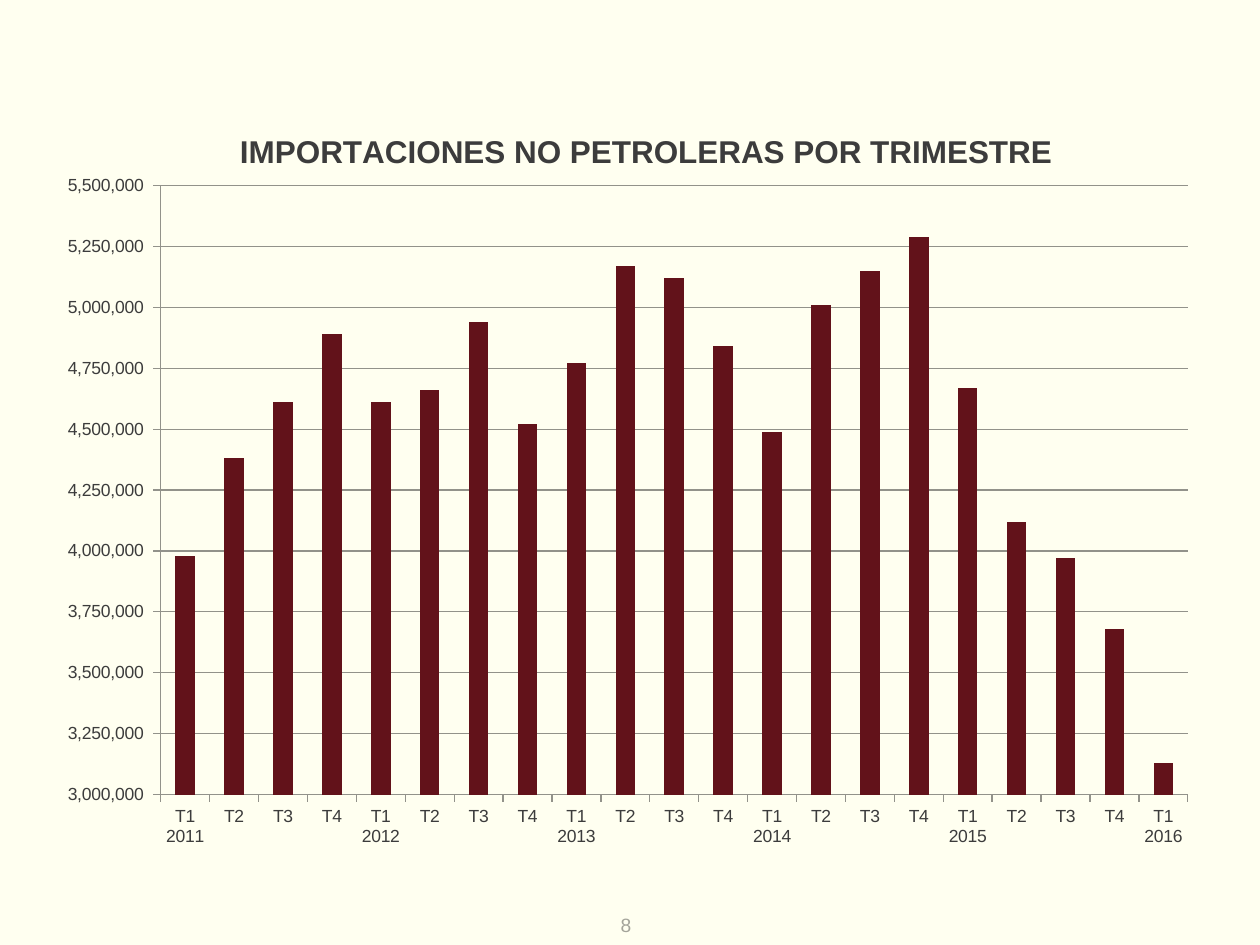
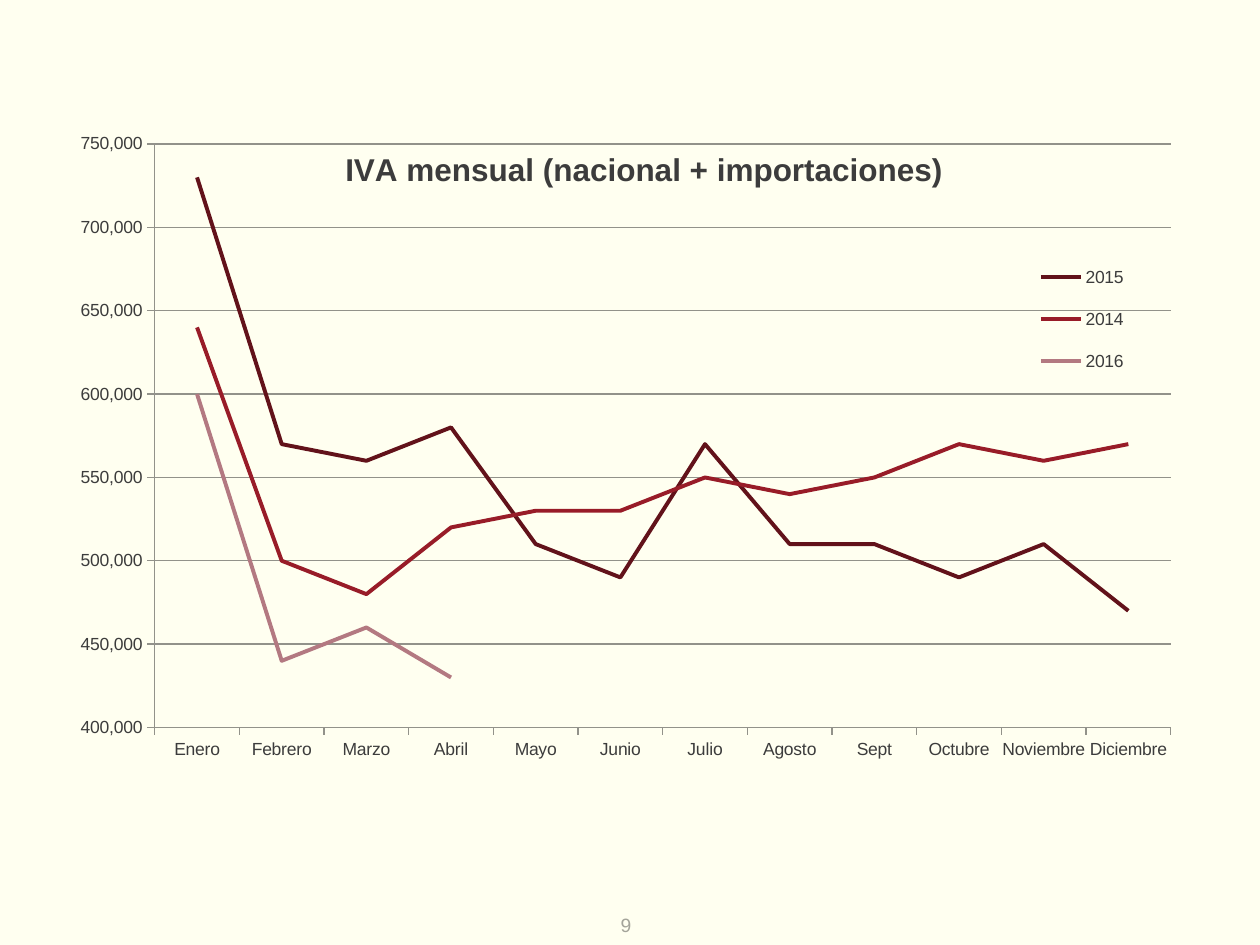
from dataclasses import dataclass

from lxml.etree import SubElement
from pptx import Presentation
from pptx.chart.data import CategoryChartData as Data
from pptx.dml.color import RGBColor as RGB
from pptx.enum.chart import XL_CHART_TYPE as Kind, XL_LEGEND_POSITION as Side
from pptx.enum.chart import XL_MARKER_STYLE as Mark, XL_TICK_MARK as Tick
from pptx.enum.text import MSO_ANCHOR as Anchor, PP_ALIGN as Align
from pptx.oxml.ns import qn
from pptx.util import Pt


@dataclass(frozen=True)
class Theme:
    paper: RGB = RGB(0xFF, 0xFF, 0xF0)
    ink: RGB = RGB(0x3C, 0x3C, 0x3C)
    faint: RGB = RGB(0xA4, 0xA4, 0x9A)
    grid: RGB = RGB(0x92, 0x92, 0x8A)
    reds: tuple = (RGB(0x62, 0x12, 0x1A), RGB(0x98, 0x1C, 0x28),
                   RGB(0xB3, 0x79, 0x81))
    font: str = "Arial"
    label: int = 10
    page: int = 11
    title: int = 18
    hair: float = 0.75
    line: float = 2.25


LOOK = Theme()

# Chart values, in thousands
TRADE = "IMPORTACIONES NO PETROLERAS POR TRIMESTRE"
IMPORTS = [3980, 4380, 4610, 4890, 4610, 4660, 4940, 4520, 4770, 5170, 5120,
           4840, 4490, 5010, 5150, 5290, 4670, 4120, 3970, 3680, 3130]
MONTHS = ["Enero", "Febrero", "Marzo", "Abril", "Mayo", "Junio", "Julio",
          "Agosto", "Sept", "Octubre", "Noviembre", "Diciembre"]
TAX = {
    "2015": [730, 570, 560, 580, 510, 490, 570, 510, 510, 490, 510, 470],
    "2014": [640, 500, 480, 520, 530, 530, 550, 540, 550, 570, 560, 570],
    "2016": [600, 440, 460, 430],
}


def quarters(count):
    """Name each quarter from 2011 on, with the year on the first."""
    return [f"T1 {2011 + n // 4}" if n % 4 == 0 else f"T{n % 4 + 1}"
            for n in range(count)]


def set_font(font, size, color, bold=False):
    font.name, font.size, font.bold = LOOK.font, Pt(size), bold
    font.color.rgb = color


def place(part, x, y, w=None, h=None, after=None, inner=False):
    """Give a chart part a manual layout, in fractions of the chart."""
    for old in part.findall(qn("c:layout")):
        part.remove(old)
    layout = SubElement(part, qn("c:layout"))
    manual = SubElement(layout, qn("c:manualLayout"))
    rules = [("layoutTarget", "inner")] if inner else []
    rules += [("xMode", "edge"), ("yMode", "edge"), ("x", x), ("y", y)]
    if w is not None:
        rules += [("w", w), ("h", h)]
    for tag, value in rules:
        SubElement(manual, qn(f"c:{tag}")).set("val", str(value))
    if after is None:
        part.insert(0, layout)
    else:
        part.find(qn(after)).addnext(layout)


def add_page(deck, number):
    """Add a blank slide with its page number at the foot."""
    slide = deck.slides.add_slide(deck.slide_layouts[6])
    box = slide.shapes.add_textbox(Pt(339), Pt(517.5), Pt(37.5), Pt(22.5))
    frame = box.text_frame
    frame.word_wrap = True
    frame.vertical_anchor = Anchor.MIDDLE
    para = frame.paragraphs[0]
    para.text = str(number)
    para.alignment = Align.CENTER
    set_font(para.font, LOOK.page, LOOK.faint)
    return slide


def add_chart(slide, kind, box, cats, rows, plot):
    """Add a chart; plot is the inner plot area in fractions."""
    data = Data()
    data.categories = cats
    for name, vals in rows.items():
        gaps = [None] * (len(cats) - len(vals))
        data.add_series(name, [v * 1000 for v in vals] + gaps)
    chart = slide.shapes.add_chart(kind, *map(Pt, box), data).chart
    set_font(chart.font, LOOK.label, LOOK.ink)
    chart.has_legend = False
    chart.plots[0].vary_by_categories = False
    place(chart._chartSpace.chart.plotArea, *plot, inner=True)
    return chart


def set_title(chart, text, x, y):
    chart.has_title = True
    title = chart.chart_title
    para = title.text_frame.paragraphs[0]
    para.text = text
    set_font(para.font, LOOK.title, LOOK.ink, bold=True)
    title.include_in_layout = True
    place(title._element, x, y, after="c:tx")


def set_axes(chart, low, high, step, fmt):
    value = chart.value_axis
    value.minimum_scale, value.maximum_scale = low, high
    value.major_unit = step
    value.has_major_gridlines = True
    value.tick_labels.number_format = fmt
    value.tick_labels.number_format_is_linked = False
    for axis in (value, chart.category_axis):
        axis.major_tick_mark = Tick.OUTSIDE
        axis.minor_tick_mark = Tick.NONE
    for part in (value, chart.category_axis, value.major_gridlines):
        part.format.line.color.rgb = LOOK.grid
        part.format.line.width = Pt(LOOK.hair)


def set_legend(chart, *spot):
    chart.has_legend = True
    chart.legend.position = Side.RIGHT
    chart.legend.include_in_layout = False
    set_font(chart.legend.font, LOOK.label, LOOK.ink)
    place(chart.legend._element, *spot, after="c:legendPos")


def add_bars(slide):
    """Quarterly imports as columns."""
    chart = add_chart(slide, Kind.COLUMN_CLUSTERED, (36, 54, 648, 437.75),
                      quarters(len(IMPORTS)), {TRADE: IMPORTS},
                      (0.085, 0.119, 0.907, 0.795))
    set_title(chart, TRADE, 0.15, 0.04)
    set_axes(chart, 3_000_000, 5_500_000, 250_000,
             r'_(* #,##0_);_(* \(#,##0\);_(* "-"??_);_(@_)')
    plot = chart.plots[0]
    plot.gap_width = 150
    fill = plot.series[0].format.fill
    fill.solid()
    fill.fore_color.rgb = LOOK.reds[0]


def add_lines(slide):
    """Monthly tax as one line a year."""
    chart = add_chart(slide, Kind.LINE, (41.75, 66.25, 648, 434.25),
                      MONTHS, TAX, (0.072, 0.037, 0.896, 0.768))
    set_title(chart, "IVA mensual (nacional + importaciones)", 0.235, 0.036)
    set_axes(chart, 400_000, 750_000, 50_000, "#,##0")
    set_legend(chart, 0.84, 0.17, 0.1, 0.195)
    for row, color in zip(chart.plots[0].series, LOOK.reds):
        row.smooth = False
        row.marker.style = Mark.NONE
        row.format.line.color.rgb = color
        row.format.line.width = Pt(LOOK.line)


def main():
    deck = Presentation()
    deck.slide_width, deck.slide_height = Pt(720), Pt(540)
    # Shared background
    back = deck.slide_master.background.fill
    back.solid()
    back.fore_color.rgb = LOOK.paper
    # Slides, numbered from 8
    for number, draw in enumerate((add_bars, add_lines), start=8):
        draw(add_page(deck, number))
    deck.save("out.pptx")


if __name__ == "__main__":
    main()
